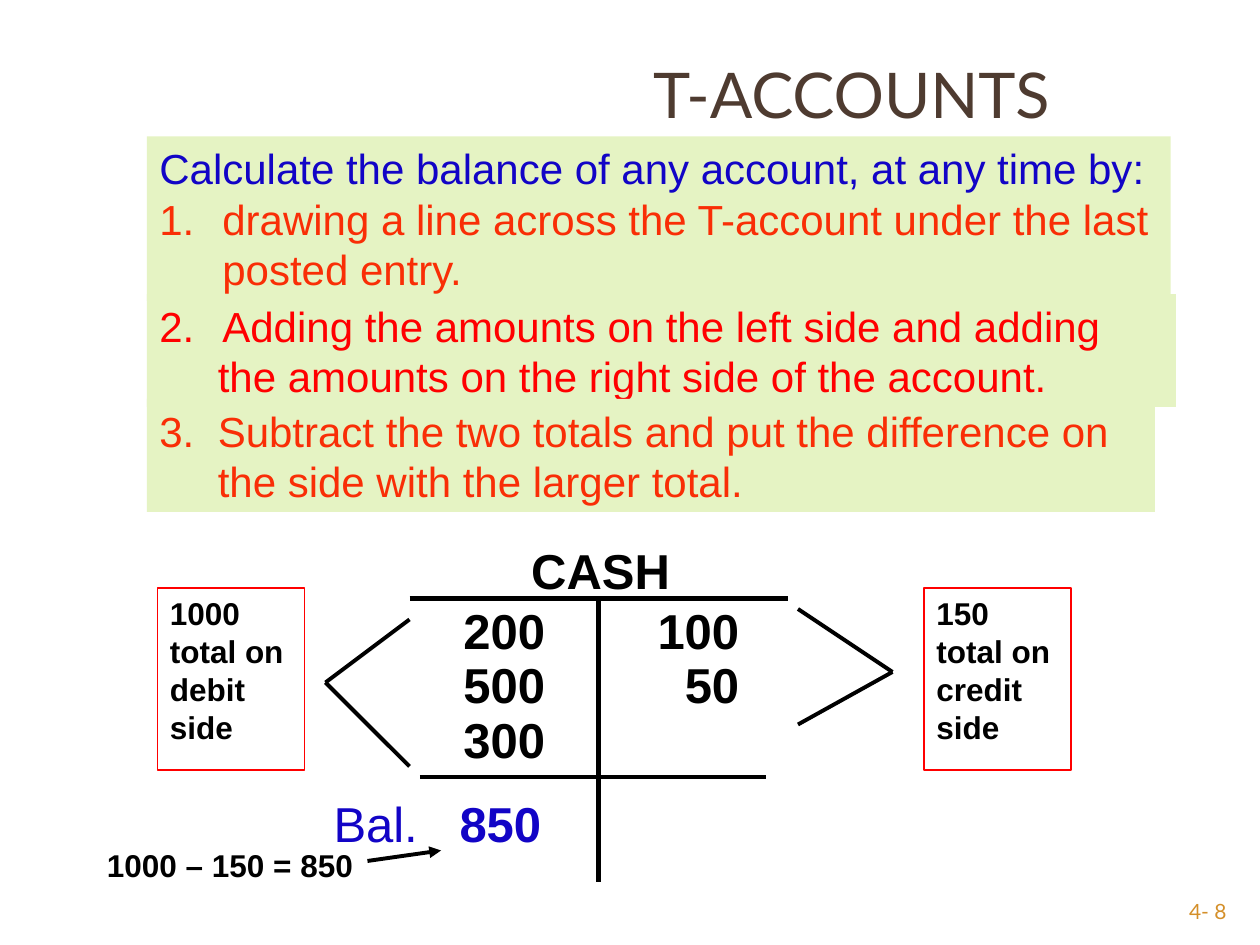
from lxml import etree
from pptx import Presentation
from pptx.dml.color import RGBColor
from pptx.enum.shapes import MSO_CONNECTOR, MSO_SHAPE
from pptx.enum.text import MSO_ANCHOR, MSO_AUTO_SIZE, PP_ALIGN
from pptx.oxml.ns import qn
from pptx.util import Pt

STRAIGHT, RECT = MSO_CONNECTOR.STRAIGHT, MSO_SHAPE.RECTANGLE
LEFT, RIGHT = PP_ALIGN.LEFT, PP_ALIGN.RIGHT
TOP, BOTTOM = MSO_ANCHOR.TOP, MSO_ANCHOR.BOTTOM
COLORS = {"brown": "4E3B30", "gold": "D48F29", "green": "E5F3C3", "blue": "1204C6",
          "orange": "F92E06", "red": "FF0000", "black": "000000"}

TITLE = "T-ACCOUNTS"
HANG = dict(indent=36, first=-36)
FLUSH = dict(indent=33.4)
# Step panels: top, width, height, paragraphs (text, colour, layout)
STEPS = [
    (78, 585, 94, [
        ("Calculate the balance of any account, at any time by:", "blue", HANG),
        ("1.\tdrawing a line across the T-account under the last posted entry.",
         "orange", HANG)]),
    (168, 588, 64.5, [
        ("2.\tAdding the amounts on the left side and adding", "red", HANG),
        ("the amounts on the right side of the account.", "red", FLUSH)]),
    (228, 576, 64.5, [
        ("3.\tSubtract the two totals and put the difference on", "orange",
         dict(indent=33.4, first=-33.4)),
        ("the side with the larger total.", "orange", FLUSH)]),
]
ACCOUNT = "CASH"
# Left edge of the column, amounts
ENTRIES = [(246.6, ["200", "500", "300"]), (357.5, ["100", "50"])]
TOTALS = [(90, "1000 total on debit side"), (528, "150 total on credit side")]
# x1, y1, x2, y2, weight
ACCOUNT_LINES = [(234, 342, 450, 342, 3), (342, 342, 342, 504, 3),
                 (240, 444, 438, 444, 2.25)]
# Outer x, upper y, lower y, tip x, tip y
BRACES = [(234, 354, 438, 186, 390), (456, 348, 414, 510, 384)]


def rgb(name):
    return RGBColor.from_string(COLORS[name])


def add_run(p, text, size, color, bold=False, font="Arial"):
    r = p.add_run()
    r.text = text
    r.font.name, r.font.size, r.font.bold = font, Pt(size), bold
    r.font.color.rgb = rgb(color)


def set_indents(p, indent=0, first=0):
    pPr = p._p.get_or_add_pPr()
    pPr.set("marL", str(Pt(indent)))
    pPr.set("indent", str(Pt(first)))


def prepare(tf, anchor=TOP):
    tf.word_wrap, tf.auto_size, tf.vertical_anchor = True, MSO_AUTO_SIZE.NONE, anchor
    return tf


def next_paragraph(tf, align=LEFT):
    p = tf.paragraphs[0] if not tf.paragraphs[0].runs else tf.add_paragraph()
    p.alignment = align
    return p


def add_text(s, x, y, w, h):
    return prepare(s.shapes.add_textbox(Pt(x), Pt(y), Pt(w), Pt(h)).text_frame)


def add_panel(s, x, y, w, h, fill=None, line=None):
    sp = s.shapes.add_shape(RECT, Pt(x), Pt(y), Pt(w), Pt(h))
    sp.shadow.inherit = False
    if fill:
        sp.fill.solid()
        sp.fill.fore_color.rgb = rgb(fill)
    else:
        sp.fill.background()
    if line:
        sp.line.color.rgb, sp.line.width = rgb(line), Pt(1)
    else:
        sp.line.fill.background()
    return prepare(sp.text_frame)


def add_line(s, x1, y1, x2, y2, weight=2.25, arrow=False):
    c = s.shapes.add_connector(STRAIGHT, Pt(x1), Pt(y1), Pt(x2), Pt(y2))
    c.line.color.rgb, c.line.width = rgb("black"), Pt(weight)
    if arrow:
        etree.SubElement(c.line._get_or_add_ln(), qn("a:tailEnd"), type="triangle")
    etree.SubElement(c._element.spPr, qn("a:effectLst"))


def add_header(s):
    title = s.shapes.title
    title.left, title.top, title.width, title.height = Pt(294), Pt(24), Pt(426), Pt(54.5)
    p = next_paragraph(prepare(title.text_frame, BOTTOM))
    set_indents(p, indent=72)
    add_run(p, TITLE, 36, "brown", font="Lato")
    p = next_paragraph(add_text(s, 648, 510, 60, 19.5), RIGHT)
    add_run(p, "4- 8", 12, "gold", font="Lato")


def add_steps(s):
    for top, width, height, paragraphs in STEPS:
        tf = add_panel(s, 84, top, width, height, fill="green")
        for text, color, layout in paragraphs:
            p = next_paragraph(tf)
            set_indents(p, **layout)
            add_run(p, text, 24, color)


def add_account(s):
    p = next_paragraph(add_text(s, 296.5, 312, 108, 34))
    p.line_spacing = 0.8
    add_run(p, ACCOUNT, 28, "black", bold=True)
    for x, amounts in ENTRIES:
        tf = add_text(s, x, 346.3, 72, 98)
        for amount in amounts:
            p = next_paragraph(tf, RIGHT)
            p.line_spacing, p.space_before = 0.8, Pt(4)
            add_run(p, amount, 28, "black", bold=True)
    for line in ACCOUNT_LINES:
        add_line(s, *line)

    p = next_paragraph(add_text(s, 168, 450, 150, 41))
    set_indents(p, indent=15.5)
    add_run(p, "Bal.\t", 28, "blue")
    add_run(p, "850", 28, "blue", bold=True)


def add_totals(s):
    for x, upper, lower, tip_x, tip_y in BRACES:
        for y in (upper, lower):
            add_line(s, x, y, tip_x, tip_y)
    for x, text in TOTALS:
        p = next_paragraph(add_panel(s, x, 336, 84, 104, line="red"))
        add_run(p, text, 18, "black", bold=True)
    p = next_paragraph(add_text(s, 54, 480, 162, 31))
    add_run(p, "1000 – 150 = 850", 18, "black", bold=True)
    add_line(s, 210, 492, 252, 486, arrow=True)


def main():
    prs = Presentation()
    prs.slide_width, prs.slide_height = Pt(720), Pt(540)
    s = prs.slides.add_slide(prs.slide_layouts[5])
    add_header(s)
    add_steps(s)
    add_account(s)
    add_totals(s)
    prs.save("out.pptx")


if __name__ == "__main__":
    main()
